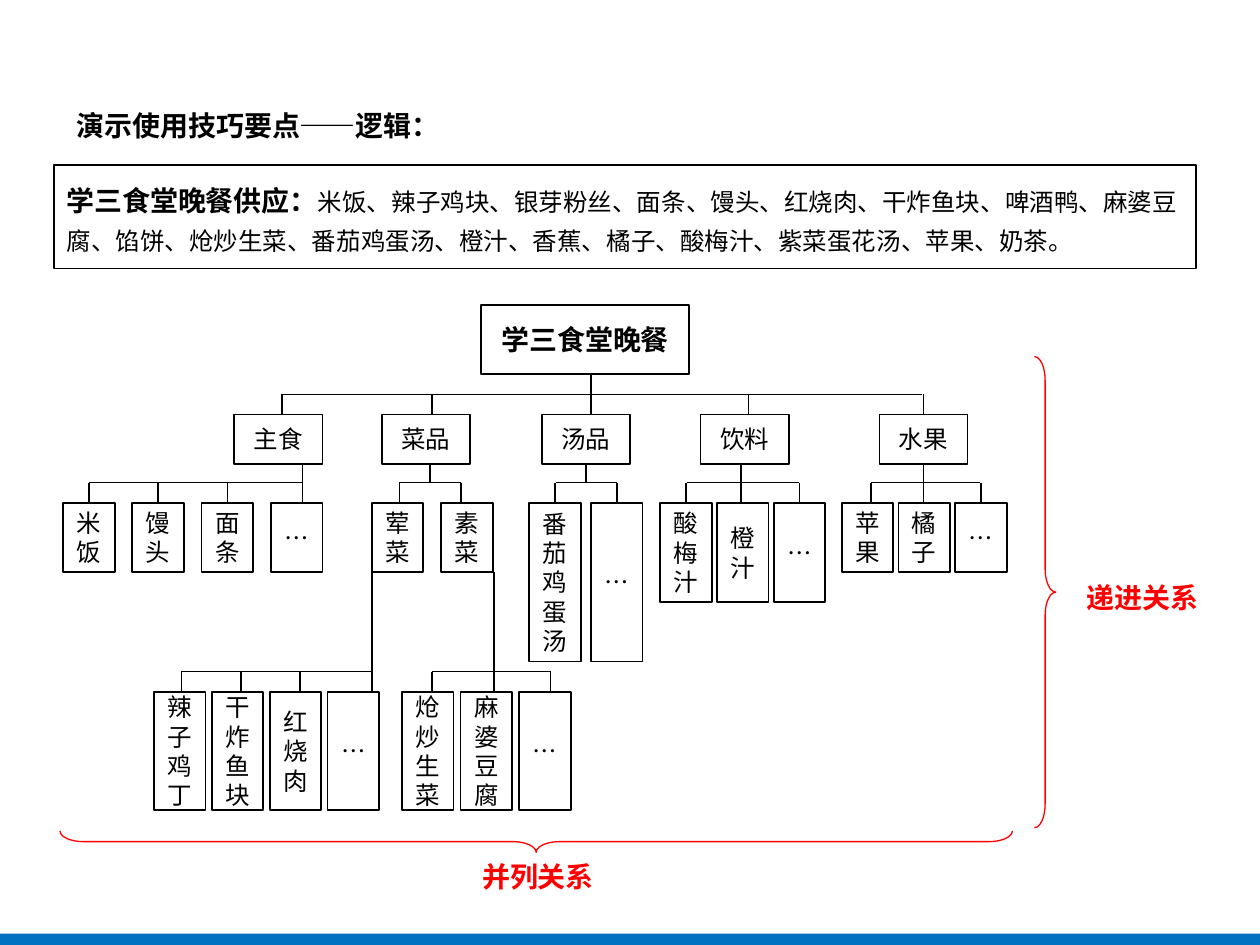
"""Build a slide that sorts a canteen dinner menu into a logic tree."""
import lxml.etree
import pptx
import pptx.dml.color
import pptx.enum.shapes
import pptx.enum.text
import pptx.oxml.ns
import pptx.util

Inches = pptx.util.Inches
Pt = pptx.util.Pt
SHAPE = pptx.enum.shapes.MSO_SHAPE
ALIGN = pptx.enum.text.PP_ALIGN
ANCHOR = pptx.enum.text.MSO_ANCHOR

BLACK = pptx.dml.color.RGBColor(0x00, 0x00, 0x00)
WHITE = pptx.dml.color.RGBColor(0xFF, 0xFF, 0xFF)
RED = pptx.dml.color.RGBColor(0xFF, 0x00, 0x00)
BLUE = pptx.dml.color.RGBColor(0x00, 0x70, 0xC0)
FONT = "Noto Sans CJK SC"

LEAF_WIDTH = 0.41
CATEGORY_WIDTH = 0.7
BUS_GAP = 0.16
SNAP = 0.01


def add_text(p, text, size=14, bold=False, color=BLACK):
    """Add a formatted run to a paragraph."""
    r = p.add_run()
    r.text = text
    r.font.size = Pt(size)
    r.font.bold = bold
    r.font.color.rgb = color
    r.font.name = FONT
    ea = lxml.etree.SubElement(r.font._element, pptx.oxml.ns.qn("a:ea"))
    ea.set("typeface", FONT)


def add_box(slide, box, kind=SHAPE.FLOWCHART_PROCESS, fill=None, line=None, width=1):
    """Add a preset shape at a (left, top, width, height) box in inches."""
    sp = slide.shapes.add_shape(kind, *map(Inches, box))
    sp.shadow.inherit = False
    if fill is None:
        sp.fill.background()
    else:
        sp.fill.solid()
        sp.fill.fore_color.rgb = fill
    if line is None:
        sp.line.fill.background()
    else:
        sp.line.color.rgb = line
        sp.line.width = Pt(width)
    return sp


def add_node(slide, box, text, **style):
    """Add an outlined tree node with centred text."""
    sp = add_box(slide, box, line=BLACK)
    tf = sp.text_frame
    tf.word_wrap = True
    tf.vertical_anchor = ANCHOR.MIDDLE
    p = tf.paragraphs[0]
    p.alignment = ALIGN.CENTER
    add_text(p, text, **style)
    return sp


def add_line(slide, x1, y1, x2, y2):
    """Add a plain black connector between two points in inches."""
    line = slide.shapes.add_connector(
        pptx.enum.shapes.MSO_CONNECTOR.STRAIGHT, *map(Inches, (x1, y1, x2, y2)))
    line.line.color.rgb = BLACK
    line.line.width = Pt(1)
    lxml.etree.SubElement(line._element.spPr, pptx.oxml.ns.qn("a:effectLst"))
    return line


def add_stem(slide, x, y1, y2, parent=None, child=None):
    """Add a vertical line, joined to each node whose middle it meets."""
    def middle(sp):
        return (sp.left + sp.width / 2) / Inches(1)

    joined = [sp is not None and abs(middle(sp) - x) <= SNAP for sp in (parent, child)]
    if joined[0]:
        x = middle(parent)
    elif joined[1]:
        x = middle(child)
    line = add_line(slide, x, y1, x, y2)
    if joined[0]:
        line.begin_connect(parent, 2)
    elif joined[1]:
        line.end_connect(child, 0)


def add_branch(slide, parent, children, trunk, drops, through):
    """Link a parent to its children by a trunk, a bus and (x, child index) drops."""
    start = (parent.top + parent.height) / Inches(1)
    end = children[0].top / Inches(1)
    bus = end - BUS_GAP
    add_stem(slide, trunk, start, end if through else bus, parent=parent)
    xs = [x for x, _ in drops] + [trunk]
    add_line(slide, min(xs), bus, max(xs), bus)
    for x, index in drops:
        add_stem(slide, x, bus, end, child=children[index])


def add_leaves(slide, left, top, step, height, names):
    """Add a row of narrow leaf nodes at an equal step."""
    return [add_node(slide, (left + i * step, top, LEAF_WIDTH, height), name)
            for i, name in enumerate(names)]


def add_title(slide, box, text):
    """Place and format the title placeholder."""
    title = slide.shapes.title
    title.left, title.top, title.width, title.height = map(Inches, box)
    tf = title.text_frame
    tf.word_wrap = True
    tf.auto_size = pptx.enum.text.MSO_AUTO_SIZE.NONE
    tf.vertical_anchor = ANCHOR.TOP
    p = tf.paragraphs[0]
    p.alignment = ALIGN.LEFT
    p.line_spacing = 1.5
    add_text(p, text, size=16, bold=True)


def add_menu(slide, box, heading, dishes):
    """Add the framed list of unsorted dishes."""
    tf = add_box(slide, box, line=BLACK).text_frame
    tf.word_wrap = True
    tf.vertical_anchor = ANCHOR.MIDDLE
    p = tf.paragraphs[0]
    p.alignment = ALIGN.LEFT
    p.line_spacing = Pt(22)
    add_text(p, heading, size=16, bold=True)
    add_text(p, dishes)


def add_tree(slide, box):
    """Draw the menu tree with its top left corner at the box."""
    x0, y0 = box[:2]
    root = add_node(slide, (x0 + 3.32, y0, 1.65, 0.55), "学三食堂晚餐", size=16, bold=True)
    groups = [
        ("主食", 1.36, 0, 0.55, 0.55, ["米饭", "馒头", "面条", "…"],
         1.9, [(0.21, 0), (0.76, 1), (1.31, 2)], True),
        ("菜品", 2.53, 2.45, 0.55, 0.55, ["荤菜", "素菜"],
         2.91, [(2.67, 0), (3.16, 1)], False),
        ("汤品", 3.8, 3.7, 0.49, 1.26, ["番茄鸡蛋汤", "…"],
         4.15, [(3.91, 0), (4.4, 1)], False),
        ("饮料", 5.06, 4.74, 0.45, 0.79, ["酸梅汁", "橙汁", "…"],
         5.38, [(4.95, 0), (5.84, 2)], True),
        ("水果", 6.48, 6.18, 0.45, 0.55, ["苹果", "橘子", "…"],
         6.82, [(6.41, 0), (7.28, 2)], True),
    ]
    categories, leaves = [], {}
    for name, left, first, step, height, names, trunk, drops, through in groups:
        category = add_node(slide, (x0 + left, y0 + 0.87, CATEGORY_WIDTH, 0.39), name)
        row = add_leaves(slide, x0 + first, y0 + 1.57, step, height, names)
        add_branch(slide, category, row, x0 + trunk,
                   [(x0 + x, i) for x, i in drops], through)
        categories.append(category)
        leaves[name] = row
    add_branch(slide, root, categories, x0 + 4.19,
               [(x0 + x, i) for x, i in [(1.74, 0), (2.93, 1), (5.44, 3), (6.82, 4)]], True)

    dishes = [
        (0.72, 0.46, ["辣子鸡丁", "干炸鱼块", "红烧肉", "…"],
         2.45, [(0.94, 0), (1.41, 1), (1.88, 2)]),
        (2.69, 0.465, ["炝炒生菜", "麻婆豆腐", "…"], 3.42, [(2.93, 0), (3.87, 2)]),
    ]
    for parent, (first, step, names, trunk, drops) in zip(leaves["菜品"], dishes):
        row = add_leaves(slide, x0 + first, y0 + 3.07, step, 0.94, names)
        add_branch(slide, parent, row, x0 + trunk, [(x0 + x, i) for x, i in drops], True)


def add_relation(slide, brace_box, label_box, text, rotation=0):
    """Add a red brace and the label of the relation it marks."""
    brace = add_box(slide, brace_box, SHAPE.RIGHT_BRACE, line=RED, width=0.75)
    brace.adjustments[0] = 1.1
    brace.rotation = rotation
    tf = add_box(slide, label_box, SHAPE.RECTANGLE, fill=WHITE).text_frame
    tf.word_wrap = True
    tf.vertical_anchor = ANCHOR.TOP
    p = tf.paragraphs[0]
    p.alignment = ALIGN.CENTER
    add_text(p, text, size=16, bold=True, color=RED)


def main():
    """Build and save the slide."""
    prs = pptx.Presentation()
    prs.slide_width, prs.slide_height = Inches(10), Inches(7.5)
    slide = prs.slides.add_slide(prs.slide_layouts.get_by_name("Title Only"))
    add_title(slide, (0.51, 0.68, 8.98, 0.5), "演示使用技巧要点——逻辑：")
    add_menu(slide, (0.43, 1.31, 9.06, 0.82), "学三食堂晚餐供应：",
             "米饭、辣子鸡块、银芽粉丝、面条、馒头、红烧肉、干炸鱼块、啤酒鸭、麻婆豆腐、"
             "馅饼、炝炒生菜、番茄鸡蛋汤、橙汁、香蕉、橘子、酸梅汁、紫菜蛋花汤、苹果、奶茶。")
    add_tree(slide, (0.5, 2.42, 7.49, 4.01))
    add_relation(slide, (8.21, 2.83, 0.17, 3.74), (8.5, 4.56, 1.14, 0.37), "递进关系")
    add_relation(slide, (4.17, 2.9, 0.17, 7.56), (3.7, 6.77, 1.14, 0.37), "并列关系", rotation=90)
    add_box(slide, (-0.01, 7.41, 10.03, 0.12), SHAPE.RECTANGLE, fill=BLUE)
    prs.save("out.pptx")


if __name__ == "__main__":
    main()
